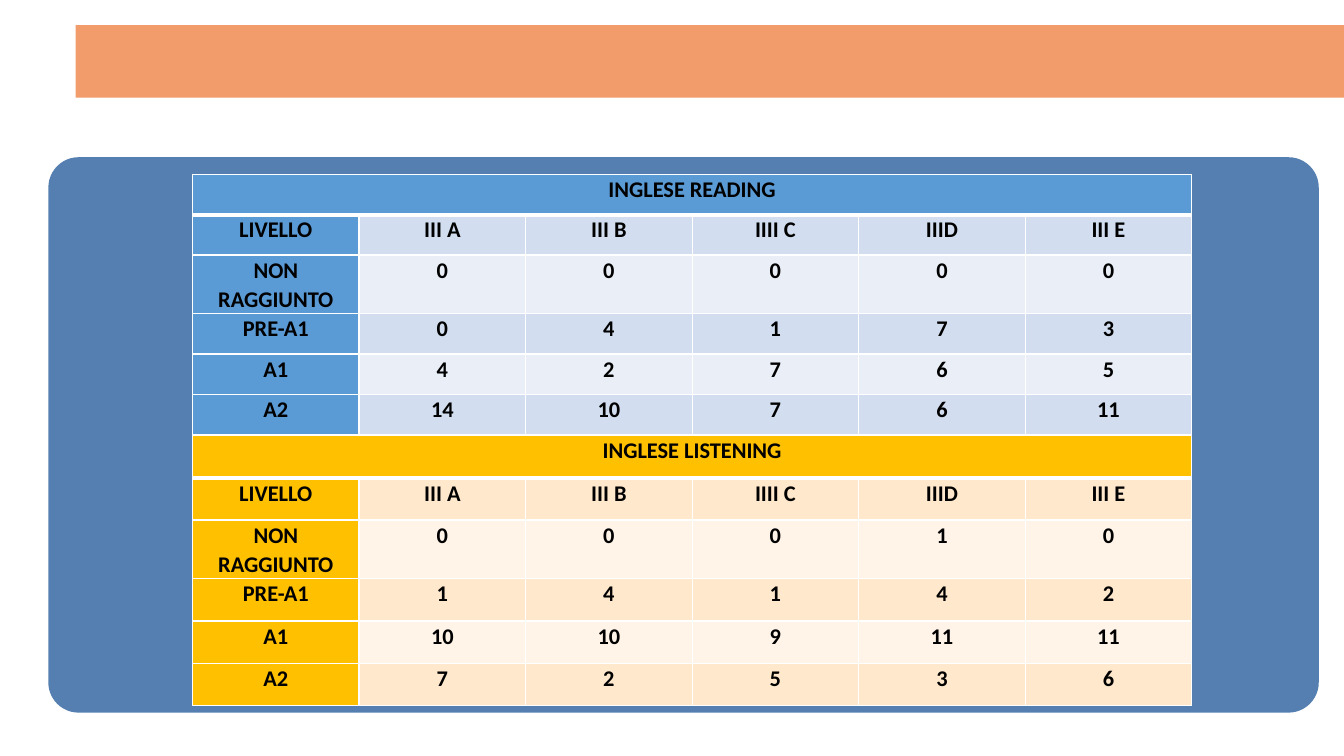
from dataclasses import dataclass

from lxml.etree import SubElement
from pptx import Presentation
from pptx.dml.color import RGBColor
from pptx.enum.shapes import MSO_SHAPE
from pptx.enum.text import PP_ALIGN
from pptx.oxml.ns import qn
from pptx.util import Inches, Pt


@dataclass(frozen=True)
class Theme:
    font: str = "Calibri"
    size: int = 16
    text: str = "000000"
    border: str = "FFFFFF"
    banner: str = "F39C6B"
    panel: str = "0D4A91"
    # Heading, odd band, even band
    reading: tuple = ("5B9BD5", "D2DEEF", "EAEFF7")
    listening: tuple = ("FFC000", "FFE8CC", "FFF4E7")


CLASSES = ["III A", "III B", "IIII C", "IIID", "III E"]
LEVELS = ["NON RAGGIUNTO", "PRE-A1", "A1", "A2"]
READING = [[0, 0, 0, 0, 0], [0, 4, 1, 7, 3], [4, 2, 7, 6, 5], [14, 10, 7, 6, 11]]
LISTENING = [[0, 0, 0, 1, 0], [1, 4, 1, 4, 2], [10, 10, 9, 11, 11], [7, 2, 5, 3, 6]]
TWO_LINE_HEIGHT = 0.58


class SlideBuilder:
    def __init__(self, slide, theme):
        self.s = slide
        self.theme = theme

    def block(self, kind, left, top, width, height, color):
        sp = self.s.shapes.add_shape(
            kind, Inches(left), Inches(top), Inches(width), Inches(height))
        sp.shadow.inherit = False
        sp.fill.solid()
        sp.fill.fore_color.rgb = RGBColor.from_string(color)
        sp.line.fill.background()
        return sp

    def panel(self, left, top, width, height, radius, opacity):
        sp = self.block(MSO_SHAPE.ROUNDED_RECTANGLE, left, top, width, height,
                        self.theme.panel)
        sp.adjustments[0] = radius / height
        color = sp.fill._xPr.find(".//" + qn("a:srgbClr"))
        SubElement(color, qn("a:alpha"), val=str(opacity * 1000))

    def borders(self, cell, top=1, bottom=1):
        tc_pr = cell._tc.get_or_add_tcPr()
        for side, width in (("L", 1), ("R", 1), ("T", top), ("B", bottom)):
            ln = SubElement(tc_pr, qn(f"a:ln{side}"), w=str(Pt(width)))
            fill = SubElement(ln, qn("a:solidFill"))
            SubElement(fill, qn("a:srgbClr"), val=self.theme.border)

    def cell(self, cell, text, color):
        cell.margin_left = cell.margin_right = Inches(0.07)
        cell.margin_top = cell.margin_bottom = 0
        cell.fill.solid()
        cell.fill.fore_color.rgb = RGBColor.from_string(color)
        p = cell.text_frame.paragraphs[0]
        p.text = text
        p.alignment = PP_ALIGN.CENTER
        p.line_spacing = 1.07
        p.space_after = Pt(8)
        p.font.name = self.theme.font
        p.font.size = Pt(self.theme.size)
        p.font.bold = True
        p.font.color.rgb = RGBColor.from_string(self.theme.text)

    def results(self, title, scores, top, row_height, palette):
        """Table of pupils per level and class, under a merged title row."""
        heading, *bands = palette
        rows = [[title] + [""] * len(CLASSES), ["LIVELLO"] + CLASSES]
        rows += [[level] + counts for level, counts in zip(LEVELS, scores)]
        heights = [TWO_LINE_HEIGHT if row[0] == LEVELS[0] else row_height
                   for row in rows]
        table = self.s.shapes.add_table(
            len(rows), len(rows[0]), Inches(1.91), Inches(top),
            Inches(9.91), Inches(sum(heights))).table
        for i, row in enumerate(rows):
            table.rows[i].height = Inches(heights[i])
            for j, value in enumerate(row):
                cell = table.cell(i, j)
                self.borders(cell, top=3 if i == 1 else 1, bottom=3 if i == 0 else 1)
                color = heading if i == 0 or j == 0 else bands[(i - 1) % 2]
                self.cell(cell, str(value), color)
        table.cell(0, 0).merge(table.cell(0, len(CLASSES)))


def main():
    prs = Presentation()
    prs.slide_width, prs.slide_height = Inches(13.33), Inches(7.5)
    theme = Theme()
    slide = SlideBuilder(prs.slides.add_slide(prs.slide_layouts[6]), theme)
    slide.block(MSO_SHAPE.RECTANGLE, 0.75, 0.25, 12.58, 0.72, theme.banner)
    slide.panel(0.48, 1.56, 12.6, 5.51, radius=0.3, opacity=70)
    slide.results("INGLESE READING", READING, 1.73, 0.4, theme.reading)
    slide.results("INGLESE LISTENING", LISTENING, 4.32, 0.42, theme.listening)
    prs.save("out.pptx")


if __name__ == "__main__":
    main()
